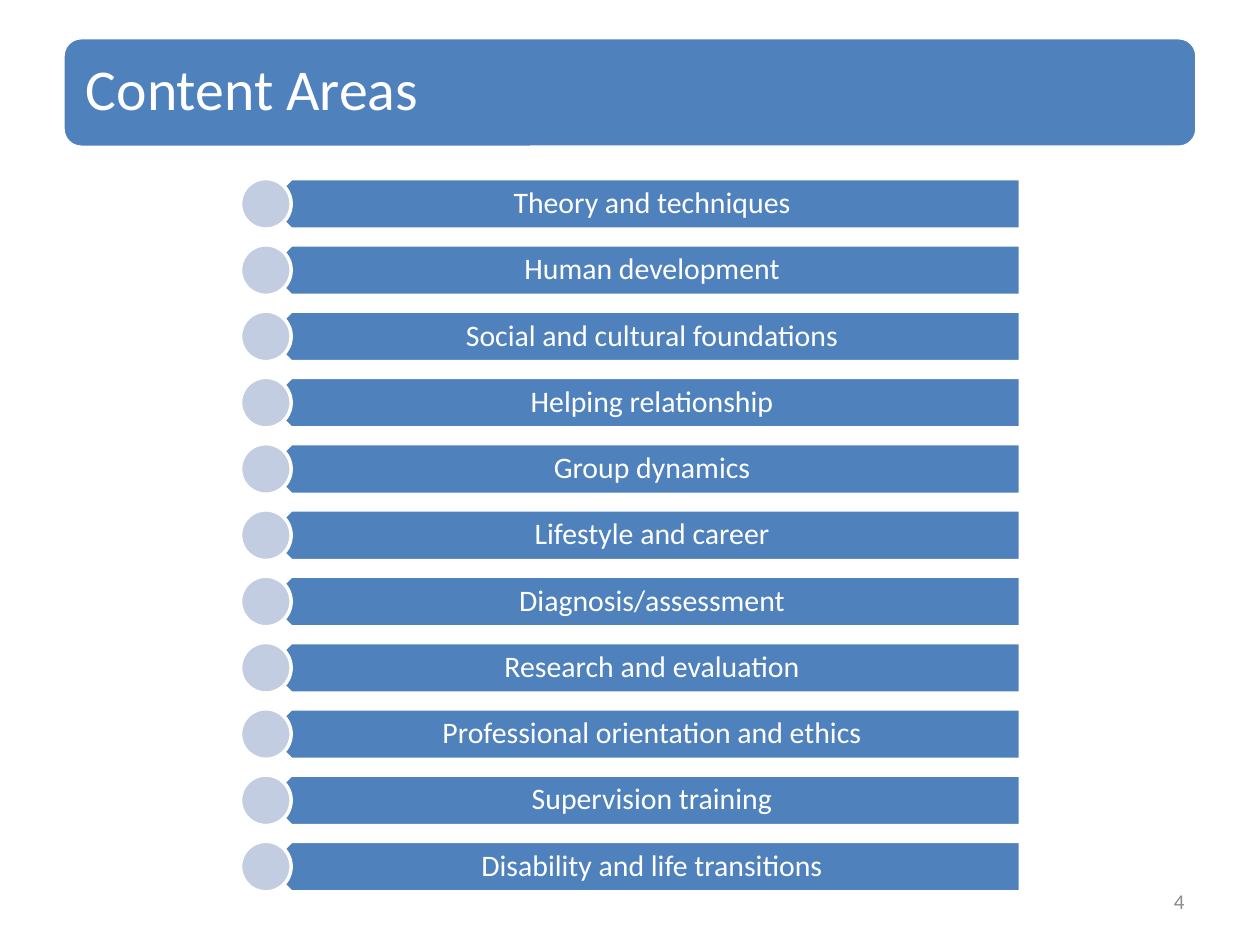
from dataclasses import dataclass

from pptx import Presentation
from pptx import util as u
from pptx.dml.color import RGBColor
from pptx.enum import shapes, text
from pptx.oxml.ns import qn

BLUE = RGBColor(0x4F, 0x81, 0xBD)
PALE = RGBColor(0xC2, 0xCD, 0xE1)
WHITE = RGBColor(0xFF, 0xFF, 0xFF)
GREY = RGBColor(0x8C, 0x8C, 0x8C)
FONT = "Calibri"

AREAS = [
    "Theory and techniques",
    "Human development",
    "Social and cultural foundations",
    "Helping relationship",
    "Group dynamics",
    "Lifestyle and career",
    "Diagnosis/assessment",
    "Research and evaluation",
    "Professional orientation and ethics",
    "Supervision training",
    "Disability and life transitions",
]
FIRST, LAST = 3.6, 16.96  # tops of the first and last rows, cm
ROW = 1.02
BAR = 5.36


@dataclass
class Box:
    """A frame in centimetres."""
    left: float
    top: float
    width: float
    height: float

    def cm(self) -> list:
        return [u.Cm(n) for n in (self.left, self.top, self.width, self.height)]


@dataclass
class Style:
    size: int
    color: RGBColor
    align: text.PP_ALIGN
    pads: tuple  # left, top, right, bottom, cm
    lines: float = 0.9


HEAD = Style(33, WHITE, text.PP_ALIGN.LEFT, (0.36,) * 4)
LABEL = Style(17, WHITE, text.PP_ALIGN.CENTER, (0.46, 0.18, 0.33, 0.18))
NUMBER = Style(12, GREY, text.PP_ALIGN.RIGHT, (0.25, 0.13, 0.25, 0.13), 1.0)


def put(item, values: dict) -> None:
    """Set each named attribute of an item."""
    for name, value in values.items():
        setattr(item, name, value)


def draw(slide, kind, box: Box, fill: RGBColor, turn: int = 0):
    shape = slide.shapes.add_shape(kind, *box.cm())
    shape.rotation = turn
    shape.shadow.inherit = False
    shape.fill.solid()
    shape.fill.fore_color.rgb = fill
    shape.line.color.rgb = WHITE
    shape.line.width = u.Pt(2)
    return shape


def write(shape, words: str, style: Style) -> None:
    frame = shape.text_frame
    frame.text = words
    sides = ("margin_left", "margin_top", "margin_right", "margin_bottom")
    put(frame, dict(zip(sides, map(u.Cm, style.pads))))
    put(frame, {
        "word_wrap": True,
        "auto_size": text.MSO_AUTO_SIZE.NONE,
        "vertical_anchor": text.MSO_ANCHOR.MIDDLE,
    })
    para = frame.paragraphs[0]
    put(para, {"alignment": style.align, "line_spacing": style.lines})
    font = para.runs[0].font
    put(font, {"name": FONT, "size": u.Pt(style.size)})
    font.color.rgb = style.color


def label(slide, box: Box, words: str, style: Style) -> None:
    write(slide.shapes.add_textbox(*box.cm()), words, style)


def row(slide, top: float, words: str) -> None:
    kinds = shapes.MSO_SHAPE
    draw(slide, kinds.PENTAGON, Box(BAR, top, 15.21, ROW), BLUE, 180)
    label(slide, Box(BAR + 0.25, top, 14.94, ROW), words, LABEL)
    draw(slide, kinds.OVAL, Box(BAR - ROW / 2, top, ROW, ROW), PALE)


def main() -> None:
    deck = Presentation()
    put(deck, {"slide_width": u.Cm(25.4), "slide_height": u.Cm(19.05)})
    slide = deck.slides.add_slide(deck.slide_layouts[5])

    banner = draw(slide, shapes.MSO_SHAPE.ROUNDED_RECTANGLE,
                  Box(1.27, 0.76, 22.86, 2.21), BLUE)
    title = slide.shapes.title
    spots = ("left", "top", "width", "height")
    put(title, dict(zip(spots, Box(1.37, 0.86, 22.66, 1.98).cm())))
    write(title, "Content Areas", HEAD)
    banner.element.addnext(title.element)  # title in front of its banner

    step = (LAST - FIRST) / (len(AREAS) - 1)
    for i, words in enumerate(AREAS):
        row(slide, FIRST + i * step, words)

    label(slide, Box(18.2, 17.66, 5.93, 1.01), "4", NUMBER)
    deck.save("out.pptx")


if __name__ == "__main__":
    main()
